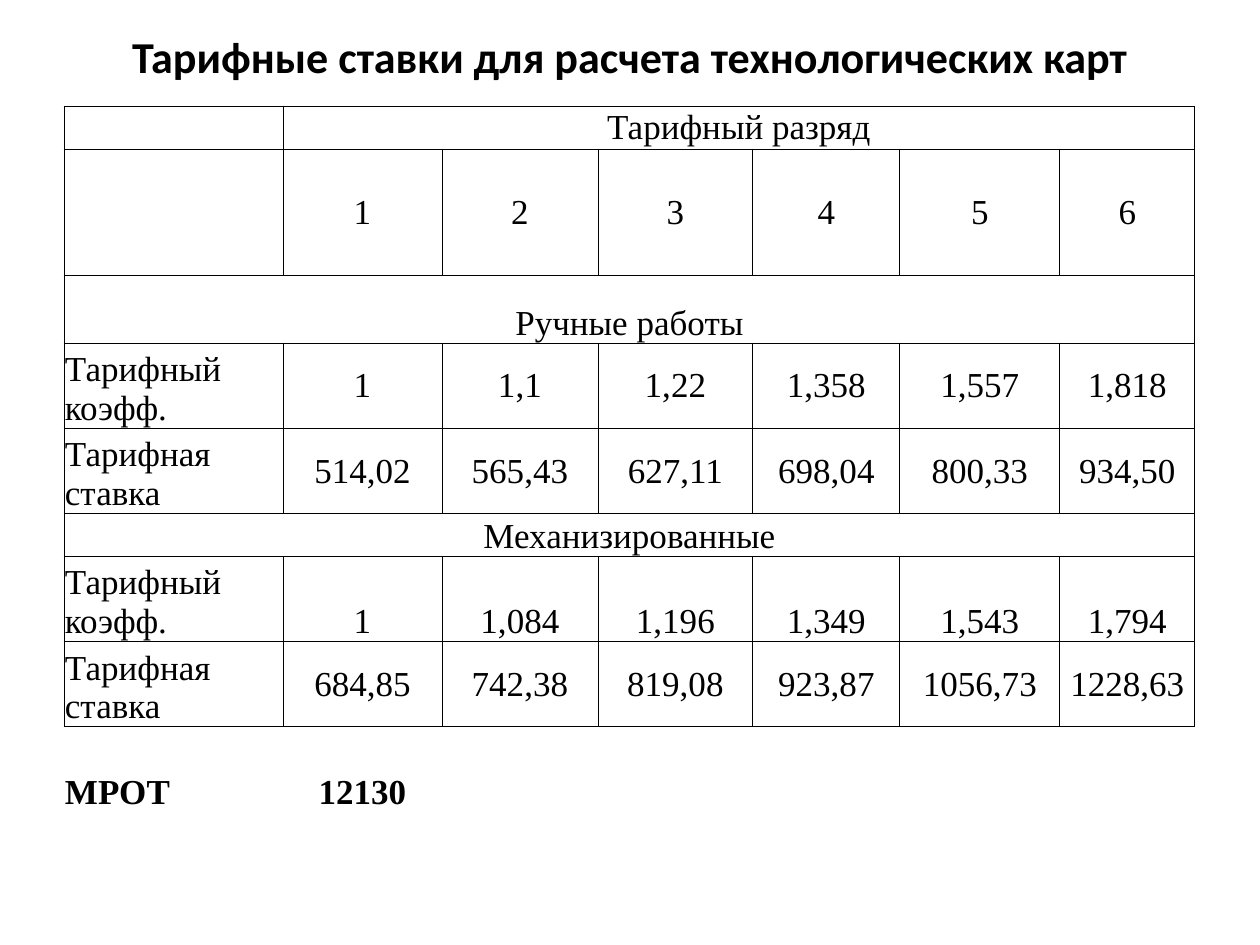
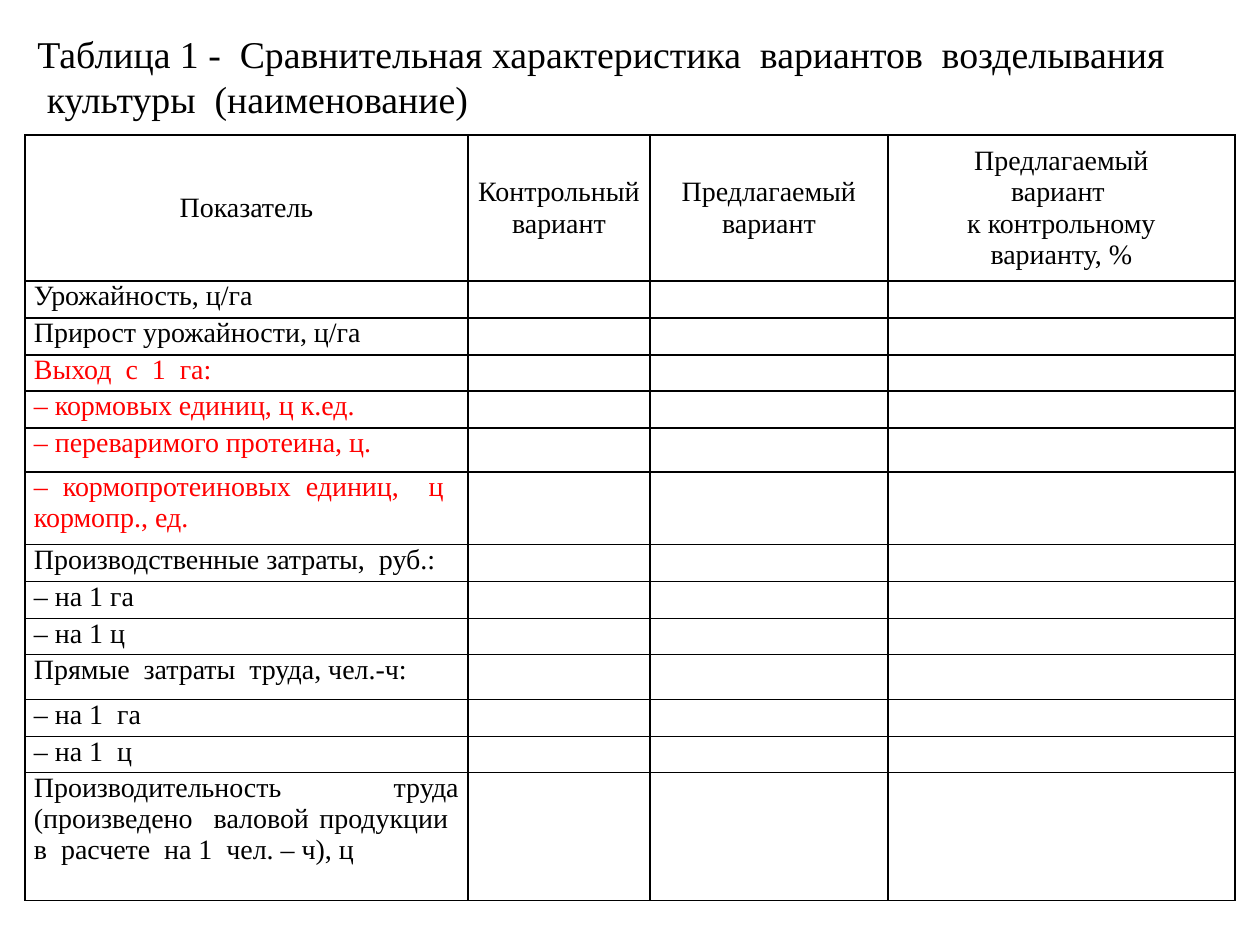
from collections import namedtuple
from copy import deepcopy
from dataclasses import dataclass

from lxml import etree
from pptx import Presentation
from pptx.dml.color import RGBColor as RGB
from pptx.enum.text import MSO_ANCHOR as Anchor, PP_ALIGN as Align
from pptx.oxml.ns import qn
from pptx.util import Emu, Pt

Box = namedtuple("Box", "left top width height")


@dataclass(frozen=True)
class Theme:
    """Hold the colours, fonts and type sizes."""
    ink: str = "000000"
    red: str = "FF0000"
    paper: str = "FFFFFF"
    sans: str = "Calibri"
    serif: str = "Times New Roman"
    head: float = 25.2
    lead: float = 21.6
    rate: int = 20
    body: int = 16


THEME = Theme()


def px(count):
    """Turn pixels into EMU."""
    return Emu(round(count * 914400 / 126))


def write(frame, words, size, font=THEME.serif, color=THEME.ink, bold=False,
          align=Align.LEFT, before=0, after=0):
    """Fill a text frame with one formatted paragraph."""
    para = frame.paragraphs[0]
    para.alignment = align
    para.space_before, para.space_after = Pt(before), Pt(after)
    if not words:
        etree.SubElement(para._p, qn("a:endParaRPr"), sz=str(size * 100))
        return
    para.text = words
    for run in para.runs:
        run.font.size, run.font.name = Pt(size), font
        run.font.bold = bold
        run.font.color.rgb = RGB.from_string(color)
    for gap in para._p.findall(qn("a:br")):
        gap.insert(0, deepcopy(para.runs[0]._r.rPr))


def title(slide, box, words, **look):
    """Place a slide title, centred vertically in its box."""
    frame = slide.shapes.add_textbox(*map(px, box)).text_frame
    frame.word_wrap = True
    frame.vertical_anchor = Anchor.MIDDLE
    write(frame, words, **look)


def grid(slide, left, top, cols, rows):
    """Add a plain table with the given column and row sizes."""
    box = Box(left, top, sum(cols), sum(rows))
    table = slide.shapes.add_table(len(rows), len(cols), *map(px, box)).table
    table.first_row = table.horz_banding = False
    for col, width in zip(table.columns, cols):
        col.width = px(width)
    for row, height in zip(table.rows, rows):
        row.height = px(height)
    return table


def rule(cell, width, sides="LRTB"):
    """Draw the named cell borders and clear the others."""
    props = cell._tc.get_or_add_tcPr()
    for side in "LRTB":
        line = etree.SubElement(props, qn(f"a:ln{side}"), w=str(Pt(width)))
        if side in sides:
            fill = etree.SubElement(line, qn("a:solidFill"))
            etree.SubElement(fill, qn("a:srgbClr"), val=THEME.ink)
        else:
            etree.SubElement(line, qn("a:noFill"))


def inset(cell, side, top):
    """Set the cell margins."""
    cell.margin_left = cell.margin_right = px(side)
    cell.margin_top, cell.margin_bottom = px(top), 0


def rates(slide, left, top):
    """Build the table of wage rates by grade."""
    cols = [219, 159, 156, 155, 147, 160, 135]
    rows = [43, 126, 68, 85, 84, 40, 85, 85, 43, 43]
    factor, wage = "Тарифный коэфф.", "Тарифная ставка"
    data = [
        ["", "Тарифный разряд"],
        ["", "1", "2", "3", "4", "5", "6"],
        ["Ручные работы"],
        [factor, "1", "1,1", "1,22", "1,358", "1,557", "1,818"],
        [wage, "514,02", "565,43", "627,11", "698,04", "800,33", "934,50"],
        ["Механизированные"],
        [factor, "1", "1,084", "1,196", "1,349", "1,543", "1,794"],
        [wage, "684,85", "742,38", "819,08", "923,87", "1056,73", "1228,63"],
        [],
        ["МРОТ", "12130"],
    ]
    bands, low, gap, total = (2, 5), (2, 5, 6, 9), 8, 9
    table = grid(slide, left, top, cols, rows)
    for r, line in enumerate(data):
        for c in range(len(cols)):
            cell = table.cell(r, c)
            side = c == 0 and r not in bands
            inset(cell, 1, 1)
            rule(cell, 0.5, {gap: "T", total: ""}.get(r, "LRTB"))
            cell.fill.solid()
            cell.fill.fore_color.rgb = RGB.from_string(THEME.paper)
            cell.vertical_anchor = (
                Anchor.BOTTOM if c == 0 or r in low else Anchor.MIDDLE)
            write(cell.text_frame, line[c] if c < len(line) else "",
                  THEME.rate, bold=r == total,
                  align=Align.LEFT if side else Align.CENTER)
    for r, c in [(0, 1), *((band, 0) for band in bands)]:
        table.cell(r, c).merge(table.cell(r, len(cols) - 1))


def compare(slide, left, top):
    """Build the form that compares the two growing variants."""
    cols = [443, 182, 238, 347]
    rows = [146, 37, 37, 36, 37, 44, 73, 37, 37, 36, 45, 37, 36, 128]
    heads = ["Показатель", "Контрольный\nвариант", "Предлагаемый\nвариант",
             "Предлагаемый\nвариант \nк контрольному\nварианту, %"]
    items = [
        "Урожайность, ц/га",
        "Прирост урожайности, ц/га",
        "Выход  с  1  га:",
        "– кормовых единиц, ц к.ед.",
        "– переваримого протеина, ц. ",
        "– кормопротеиновых единиц,  ц  кормопр., ед.",
        "Производственные затраты,  руб.:",
        "– на 1 га",
        "– на 1 ц",
        "Прямые  затраты  труда, чел.-ч:",
        "– на 1  га",
        "– на 1  ц",
        "Производительность труда (произведено  валовой продукции  "
        "в  расчете  на 1  чел. – ч), ц",
    ]
    data = [heads] + [[item, "", "", ""] for item in items]
    feed = range(3, 7)
    table = grid(slide, left, top, cols, rows)
    for r, line in enumerate(data):
        for c, words in enumerate(line):
            cell = table.cell(r, c)
            inset(cell, 9, 0)
            rule(cell, 1)
            cell.fill.background()
            cell.vertical_anchor = Anchor.TOP if r else Anchor.MIDDLE
            write(cell.text_frame, words, THEME.body,
                  color=THEME.red if r in feed else THEME.ink,
                  align=Align.JUSTIFY if r else Align.CENTER)


def main():
    """Build both slides and save them."""
    deck = Presentation()
    deck.slide_width, deck.slide_height = px(1260), px(945)
    blank = deck.slide_layouts[6]

    slide = deck.slides.add_slide(blank)
    title(slide, Box(63, 26, 1134, 59),
          "Тарифные ставки для расчета технологических карт",
          size=THEME.head, font=THEME.sans, bold=True, align=Align.CENTER)
    rates(slide, 64, 106)

    slide = deck.slides.add_slide(blank)
    title(slide, Box(25, 26, 1172, 100),
          "Таблица 1 -  Сравнительная характеристика  вариантов  "
          "возделывания\n культуры  (наименование)",
          size=THEME.lead, before=12, after=6)
    compare(slide, 25, 135)

    deck.save("out.pptx")


if __name__ == "__main__":
    main()
